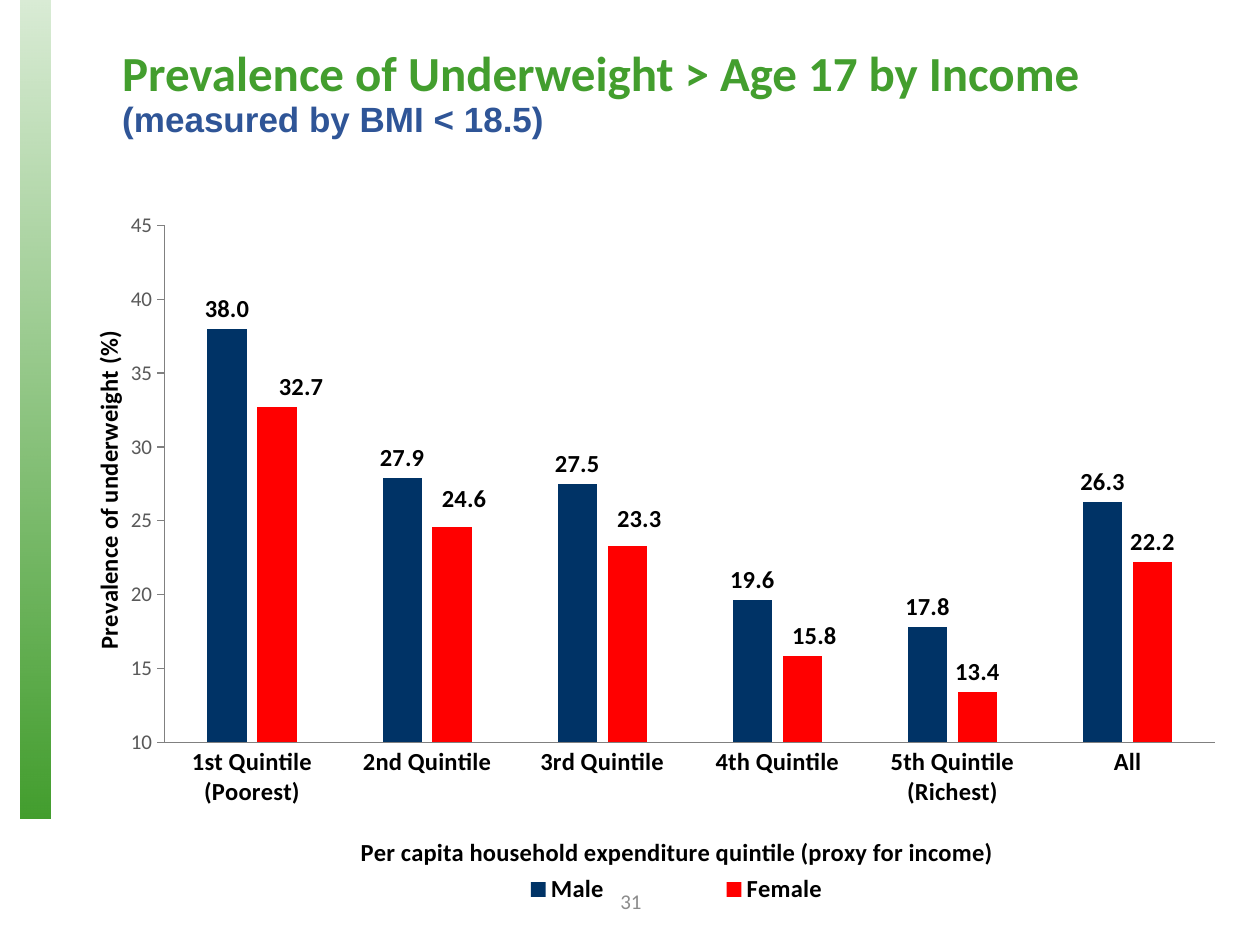
from lxml.etree import SubElement
from pptx import Presentation
from pptx.chart.data import CategoryChartData
from pptx.dml.color import RGBColor
from pptx.enum.chart import XL_CHART_TYPE, XL_LABEL_POSITION, XL_LEGEND_POSITION, XL_TICK_MARK
from pptx.enum.shapes import MSO_SHAPE
from pptx.enum.text import MSO_ANCHOR, PP_ALIGN
from pptx.oxml import parse_xml
from pptx.oxml.ns import nsdecls, qn
from pptx.util import Cm, Pt

GREEN = RGBColor(0x43, 0x9E, 0x2E)
BLUE = RGBColor(0x2F, 0x55, 0x97)
NAVY = RGBColor(0x00, 0x33, 0x66)
RED = RGBColor(0xFF, 0x00, 0x00)
BLACK = RGBColor(0x00, 0x00, 0x00)
AXIS_GREY = RGBColor(0x80, 0x80, 0x80)
TICK_GREY = RGBColor(0x59, 0x59, 0x59)
NUMBER_GREY = RGBColor(0x8C, 0x8C, 0x8C)

QUINTILES = ["1st Quintile\n(Poorest)", "2nd Quintile", "3rd Quintile",
             "4th Quintile", "5th Quintile\n(Richest)", "All"]
PREVALENCE = {
    "Male ": (NAVY, [38.0, 27.9, 27.5, 19.6, 17.8, 26.3]),
    "Female": (RED, [32.7, 24.6, 23.3, 15.8, 13.4, 22.2]),
}
# Shifts of the first female labels, as fractions of the chart
FEMALE_LABEL_SHIFTS = [(0.02, 0), (0.01, -0.01), (0.01, -0.01), (0.01, 0)]
LABEL_FORMAT = "#,##0.0"


def style_font(font, size, color, bold=False, name="Calibri"):
    font.name, font.size, font.bold = name, Pt(size), bold
    font.color.rgb = color


def set_layout(element, inner=False, **place):
    """Give a chart part a manual place; x, y, w and h are chart fractions."""
    for old in element.findall(qn("c:layout")):
        element.remove(old)
    layout = parse_xml(f"<c:layout {nsdecls('c')}><c:manualLayout/></c:layout>")
    manual = layout[0]
    if inner:
        SubElement(manual, qn("c:layoutTarget")).set("val", "inner")
    if element.tag != qn("c:dLbl"):
        for side in ("x", "y"):
            SubElement(manual, qn(f"c:{side}Mode")).set("val", "edge")
    for side, fraction in place.items():
        SubElement(manual, qn(f"c:{side}")).set("val", str(fraction))
    leading = [qn(tag) for tag in ("c:idx", "c:tx", "c:legendPos")]
    element.insert(sum(child.tag in leading for child in element), layout)


class SlideBuilder:
    def __init__(self, slide):
        self.slide = slide

    def side_band(self, left, top, width, height):
        band = self.slide.shapes.add_shape(
            MSO_SHAPE.RECTANGLE, Cm(left), Cm(top), Cm(width), Cm(height))
        band.shadow.inherit = False
        band.line.fill.background()
        band.fill.gradient()
        band.fill.gradient_angle = 270
        for stop in band.fill.gradient_stops:
            stop.color.rgb = GREEN
        pale = next(band._element.iter(qn("a:srgbClr")))
        SubElement(pale, qn("a:alpha")).set("val", "20000")

    def title(self, heading, measure, left, top, width, height):
        title = self.slide.shapes.title
        title.left, title.top, title.width, title.height = map(Cm, (left, top, width, height))
        frame = title.text_frame
        frame.word_wrap = True
        frame.vertical_anchor = MSO_ANCHOR.TOP
        paragraph = frame.paragraphs[0]
        paragraph.alignment = PP_ALIGN.LEFT
        paragraph.line_spacing = 0.9
        heading_run = paragraph.add_run()
        heading_run.text = heading
        style_font(heading_run.font, 28, GREEN, True)
        paragraph.add_line_break()
        measure_run = paragraph.add_run()
        measure_run.text = measure
        style_font(measure_run.font, 20, BLUE, True, "Arial")

    def page_number(self, number, left, top, width, height):
        box = self.slide.shapes.add_textbox(Cm(left), Cm(top), Cm(width), Cm(height))
        frame = box.text_frame
        frame.word_wrap = True
        frame.vertical_anchor = MSO_ANCHOR.MIDDLE
        paragraph = frame.paragraphs[0]
        paragraph.text = number
        paragraph.alignment = PP_ALIGN.CENTER
        style_font(paragraph.font, 12, NUMBER_GREY)

    def axis(self, axis, title, title_x, title_y, tick_mark):
        axis.has_major_gridlines = False
        axis.major_tick_mark = tick_mark
        axis.minor_tick_mark = XL_TICK_MARK.NONE
        axis.format.line.color.rgb = AXIS_GREY
        axis.format.line.width = Pt(0.75)
        paragraph = axis.axis_title.text_frame.paragraphs[0]
        paragraph.text = title
        style_font(paragraph.font, 14, BLACK, True)
        set_layout(axis.axis_title._element, x=title_x, y=title_y)

    def series(self, series, color):
        series.format.fill.solid()
        series.format.fill.fore_color.rgb = color
        series.invert_if_negative = False
        labels = series.data_labels
        labels.show_value = True
        labels.number_format = LABEL_FORMAT
        labels.number_format_is_linked = False
        labels.position = XL_LABEL_POSITION.OUTSIDE_END
        style_font(labels.font, 14, BLACK, True)

    def shift_label(self, series, index, x, y):
        label = series.points[index].data_label
        style_font(label.font, 14, BLACK, True)
        label.position = XL_LABEL_POSITION.OUTSIDE_END
        element = series.data_labels._element.findall(qn("c:dLbl"))[index]
        set_layout(element, x=x, y=y)
        element.find(qn("c:layout")).addnext(parse_xml(
            f'<c:numFmt {nsdecls("c")} formatCode="{LABEL_FORMAT}" sourceLinked="0"/>'))

    def column_chart(self, left, top, width, height):
        data = CategoryChartData(number_format=LABEL_FORMAT)
        data.categories = QUINTILES
        for name, (_, values) in PREVALENCE.items():
            data.add_series(name, values)
        chart = self.slide.shapes.add_chart(
            XL_CHART_TYPE.COLUMN_CLUSTERED, Cm(left), Cm(top), Cm(width), Cm(height), data).chart
        style_font(chart.font, 10, BLACK)
        chart.has_title = False
        plot = chart.plots[0]
        plot.gap_width, plot.overlap, plot.vary_by_categories = 219, -27, False
        set_layout(chart._chartSpace.chart.plotArea, inner=True, x=0.118, y=0.03, w=0.866, h=0.716)

        quintile_axis, percent_axis = chart.category_axis, chart.value_axis
        self.axis(quintile_axis, "Per capita household expenditure quintile (proxy for income)",
                  0.276, 0.868, XL_TICK_MARK.NONE)
        style_font(quintile_axis.tick_labels.font, 14, BLACK, True)
        self.axis(percent_axis, "Prevalence of underweight (%)", 0.054, 0.17,
                  XL_TICK_MARK.OUTSIDE)
        style_font(percent_axis.tick_labels.font, 12, TICK_GREY)
        percent_axis.tick_labels.number_format = "#,##0"
        percent_axis.tick_labels.number_format_is_linked = False
        percent_axis.minimum_scale, percent_axis.maximum_scale = 10, 45
        percent_axis.major_unit = 5

        for series, (color, _) in zip(plot.series, PREVALENCE.values()):
            self.series(series, color)
        for index, shift in enumerate(FEMALE_LABEL_SHIFTS):
            self.shift_label(plot.series[1], index, *shift)

        chart.has_legend = True
        chart.legend.position = XL_LEGEND_POSITION.BOTTOM
        chart.legend.include_in_layout = False
        style_font(chart.legend.font, 14, BLACK, True)
        set_layout(chart.legend._element, x=0.33, y=0.92, w=0.42, h=0.06)


def main():
    deck = Presentation()
    deck.slide_width, deck.slide_height = Cm(25.4), Cm(19.05)
    builder = SlideBuilder(deck.slides.add_slide(deck.slide_layouts[5]))
    builder.side_band(0.41, 0, 0.61, 16.51)
    builder.page_number("31", 9.86, 17.65, 5.72, 1.02)
    builder.title("Prevalence of Underweight > Age 17 by Income",
                  "(measured by BMI < 18.5)", 2.21, 0.86, 20.9, 2.82)
    builder.column_chart(0.43, 4.11, 24.46, 14.55)
    deck.save("out.pptx")


if __name__ == "__main__":
    main()
